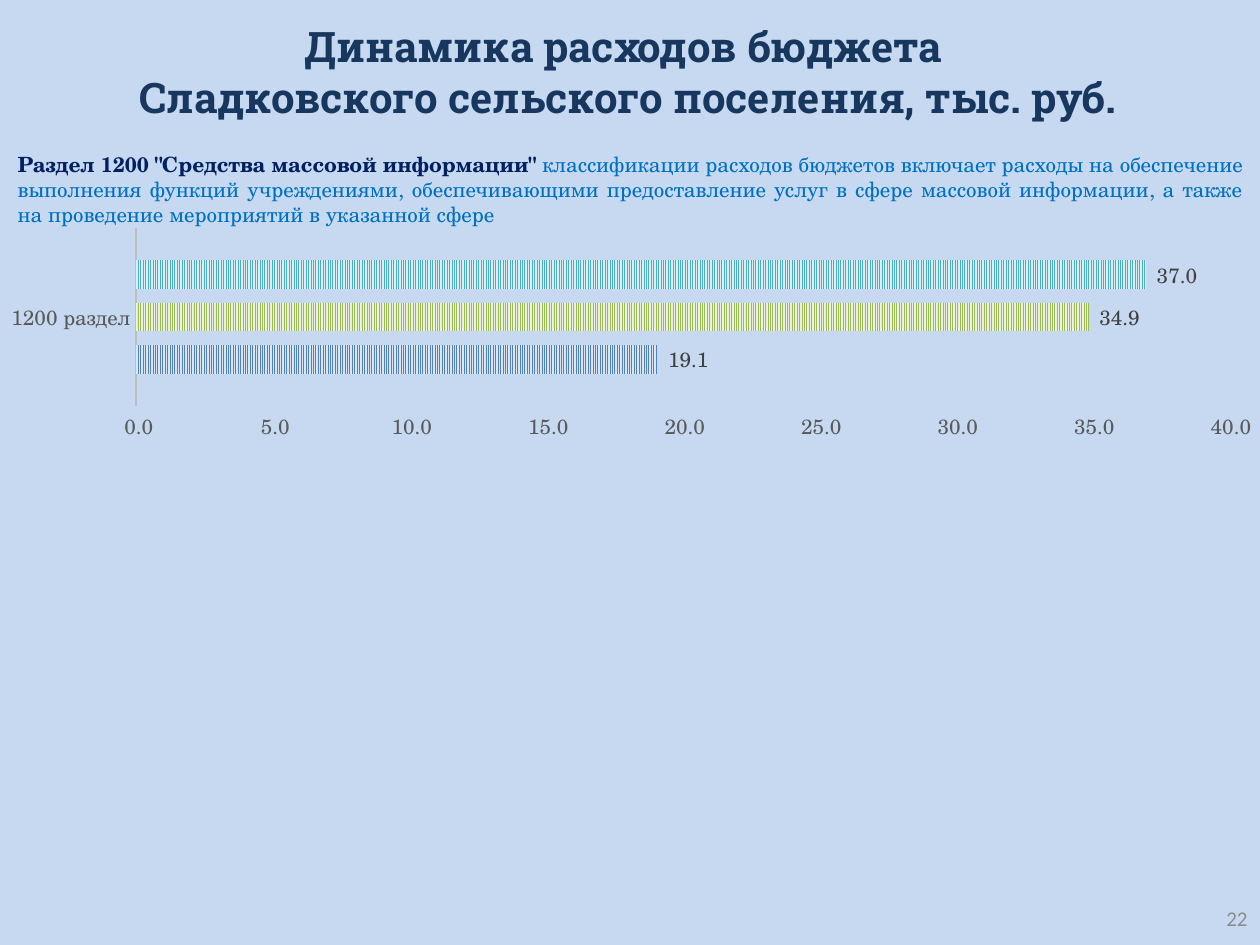
"""Build the slide on budget spending under section 1200."""
from lxml import etree
from pptx import Presentation
from pptx import util as u
from pptx.chart import data
from pptx.dml import color
from pptx.enum import chart as ch, dml, text
from pptx.oxml import ns

SERIF = "TeX Gyre Schola"
NUMBER = r"#\ ##0.0"


def paint(hex_value):
    return color.RGBColor.from_string(hex_value)


def style(font, hex_value, name=SERIF, size=12, bold=False):
    font.name, font.size, font.bold = name, u.Pt(size), bold
    font.color.rgb = paint(hex_value)


deck = Presentation()
deck.slide_width, deck.slide_height = u.Pt(720), u.Pt(540)
slide = deck.slides.add_slide(deck.slide_layouts[5])
slide.background.fill.solid()
slide.background.fill.fore_color.rgb = paint("C6D9F1")

heading = slide.shapes.title
heading.left, heading.top, heading.width, heading.height = u.Pt(-1), u.Pt(13), u.Pt(720), u.Pt(55.5)
heading.text_frame.vertical_anchor = text.MSO_ANCHOR.MIDDLE
heading_line = heading.text_frame.paragraphs[0]
heading_line.alignment = text.PP_ALIGN.CENTER
for index, words in enumerate(("Динамика расходов бюджета ", "Сладковского сельского поселения, тыс. руб.")):
    if index:
        heading_line.add_line_break()
    run = heading_line.add_run()
    run.text = words
    style(run.font, "17375E", "Roboto Slab", 24, True)

spending = data.CategoryChartData(number_format=NUMBER)
spending.categories = ["1200 раздел"]
years = [("2021", 19.1, "4F81BD", "DCE6F2"), ("2022", 34.9, "9BBB59", "EBF1DE"), ("2023", 37, "4BACC6", "DBEEF4")]
for year, amount, stripe, ground in years:
    spending.add_series(year, [amount])
chart = slide.shapes.add_chart(
    ch.XL_CHART_TYPE.BAR_CLUSTERED, u.Pt(6.5), u.Pt(129), u.Pt(708.5), u.Pt(123), spending).chart
style(chart.font, "000000", "Calibri", 10)
chart.has_title = False
chart.has_legend = True
chart.legend.position = ch.XL_LEGEND_POSITION.TOP
chart.legend.include_in_layout = False
style(chart.legend.font, "595959")

for axis in (chart.category_axis, chart.value_axis):
    axis.has_major_gridlines = False
    axis.major_tick_mark = axis.minor_tick_mark = ch.XL_TICK_MARK.NONE
    style(axis.tick_labels.font, "595959")
chart.category_axis.format.line.color.rgb = paint("BFBFBF")
chart.category_axis.format.line.width = u.Pt(1.5)
amounts = chart.value_axis
amounts.format.line.fill.background()
amounts.minimum_scale, amounts.maximum_scale, amounts.major_unit = 0, 40, 5
amounts.tick_labels.number_format = NUMBER
amounts.tick_labels.number_format_is_linked = False

bars = chart.plots[0]
bars.gap_width, bars.overlap, bars.vary_by_categories = 227, -48, False
for bar, (year, amount, stripe, ground) in zip(bars.series, years):
    fill = bar.format.fill
    fill.patterned()
    fill.pattern = dml.MSO_PATTERN.NARROW_VERTICAL
    fill.fore_color.rgb, fill.back_color.rgb = paint(stripe), paint(ground)
    labels = bar.data_labels
    labels.show_value = True
    labels.position = ch.XL_LABEL_POSITION.OUTSIDE_END
    labels.number_format, labels.number_format_is_linked = NUMBER, False
    style(labels.font, "404040")

chart_xml = chart._chartSpace.chart
edges = [("xMode", "edge"), ("yMode", "edge")]
for part, index, target, box in (
        (chart_xml.plotArea, 0, [("layoutTarget", "inner")], (0.1, 0.01, 0.89, 0.84)),
        (chart_xml.find(ns.qn("c:legend")), 1, [], (0.41, 0.03, 0.17, 0.11))):
    for old_layout in part.findall(ns.qn("c:layout")):
        part.remove(old_layout)
    layout = etree.Element(ns.qn("c:layout"))
    manual = etree.SubElement(layout, ns.qn("c:manualLayout"))
    for tag, value in target + edges + list(zip("xywh", box)):
        etree.SubElement(manual, ns.qn("c:" + tag)).set("val", str(value))
    part.insert(index, layout)

page = ((552, 510, 168, 29), text.MSO_ANCHOR.MIDDLE, text.PP_ALIGN.RIGHT, [("22", "8C8C8C", "Calibri", False)])
definition = ((3, 83, 715, 79), text.MSO_ANCHOR.TOP, text.PP_ALIGN.JUSTIFY, [
    ('Раздел 1200 "Средства массовой информации" ', "002060", SERIF, True),
    ("классификации расходов бюджетов включает расходы на обеспечение выполнения функций учреждениями, "
     "обеспечивающими предоставление услуг в сфере массовой информации, а также на проведение мероприятий "
     "в указанной сфере", "0070C0", SERIF, False)])
for place, anchor, alignment, pieces in (page, definition):
    frame = slide.shapes.add_textbox(*map(u.Pt, place)).text_frame
    frame.word_wrap = True
    frame.vertical_anchor = anchor
    frame.paragraphs[0].alignment = alignment
    for words, hex_value, name, bold in pieces:
        run = frame.paragraphs[0].add_run()
        run.text = words
        style(run.font, hex_value, name, bold=bold)

deck.save("out.pptx")
